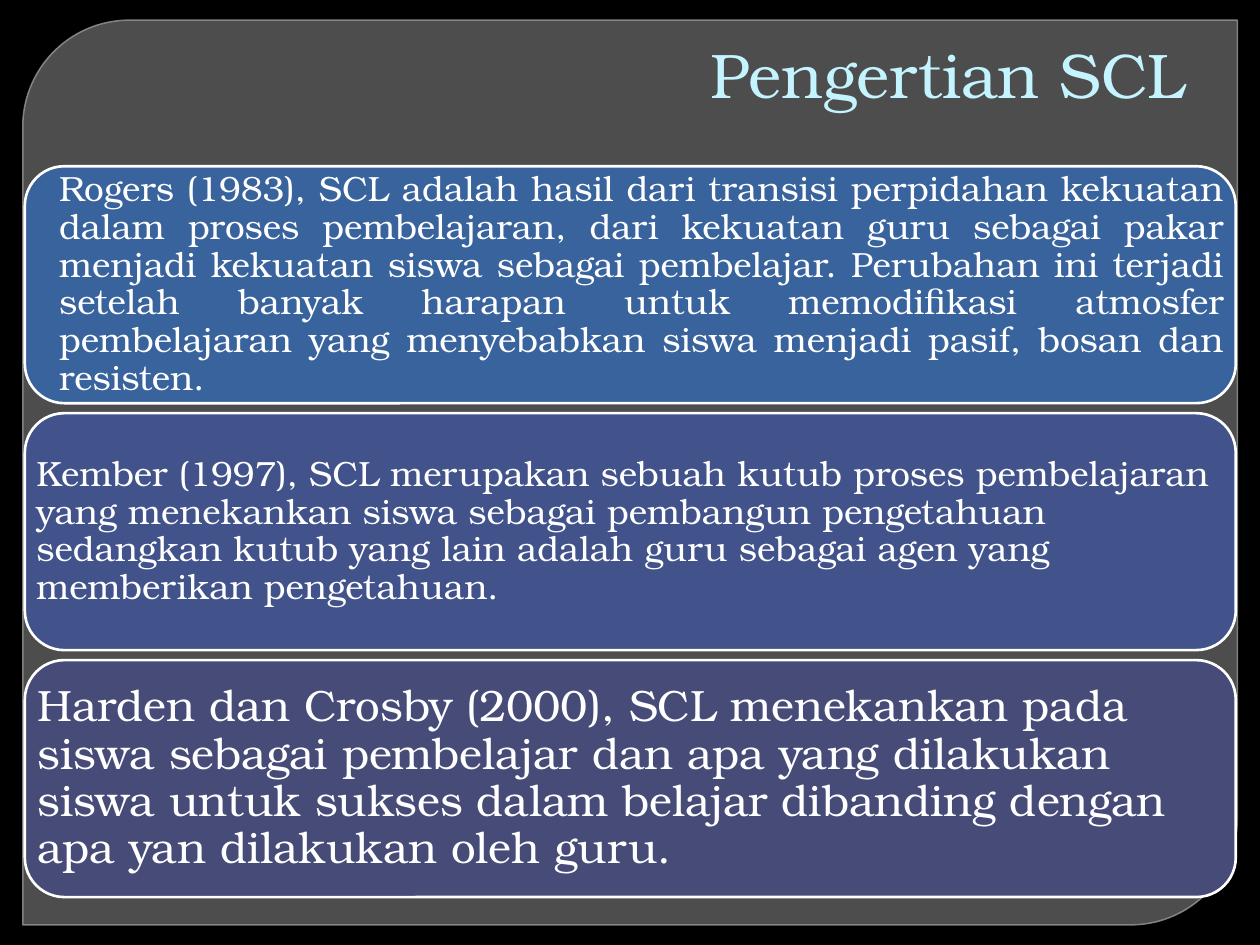
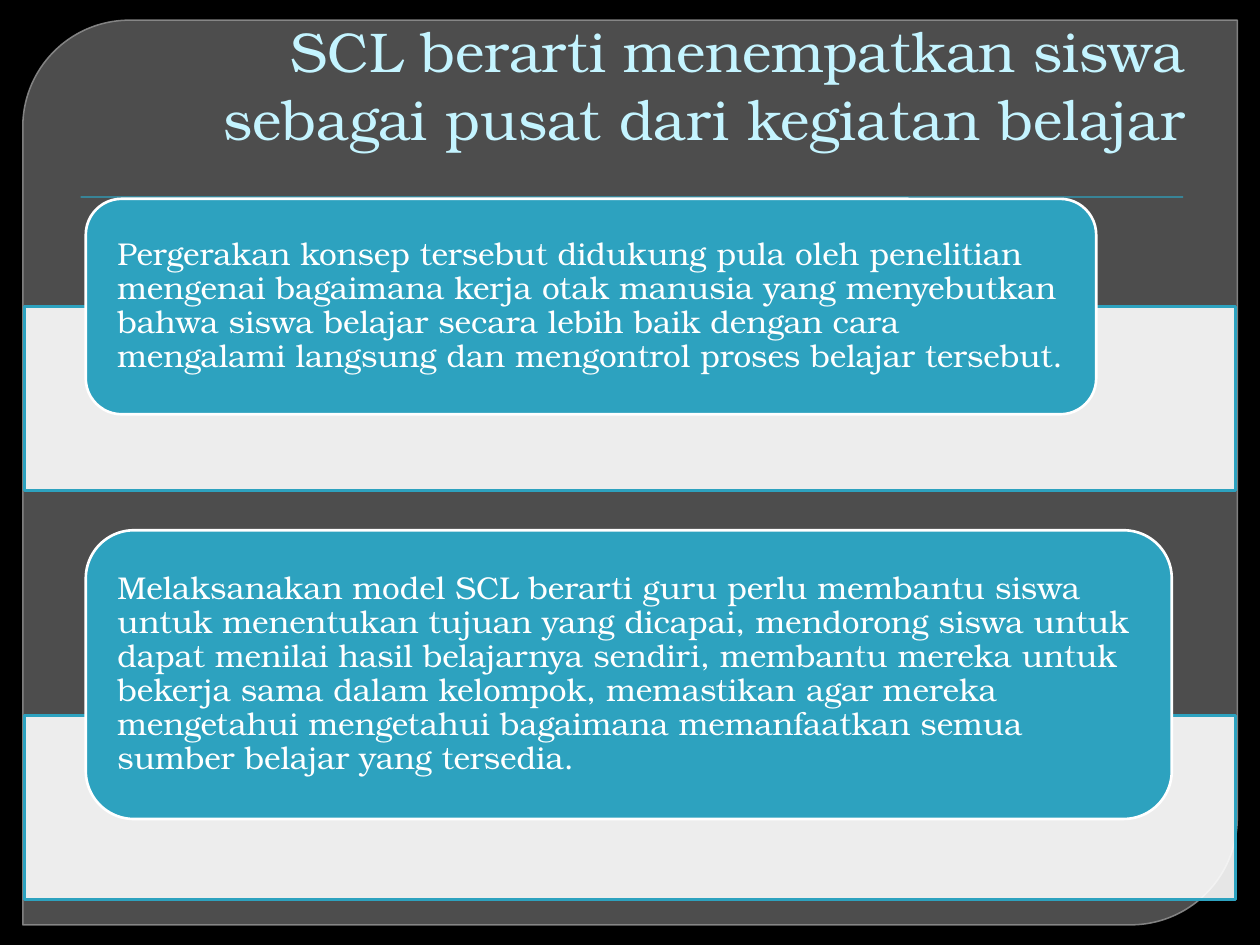
from lxml import etree
from pptx import Presentation
from pptx.dml.color import RGBColor
from pptx.enum.shapes import MSO_SHAPE
from pptx.enum.text import MSO_ANCHOR, PP_ALIGN
from pptx.oxml.ns import qn
from pptx.util import Pt

# Content
DEFINITIONS_TITLE = "Pengertian SCL"
MEANING_TITLE = "SCL berarti menempatkan siswa sebagai pusat dari kegiatan belajar"

BLACK = RGBColor(0x00, 0x00, 0x00)
WHITE = RGBColor(0xFF, 0xFF, 0xFF)
PANEL_GRAY = RGBColor(0x77, 0x77, 0x77)
PANEL_EDGE = RGBColor(0x8E, 0x8E, 0x8E)
TITLE_CYAN = RGBColor(0xC4, 0xF4, 0xFF)
TEAL = RGBColor(0x2D, 0xA2, 0xBF)
BLUE = RGBColor(0x39, 0x63, 0x9D)
INDIGO = RGBColor(0x41, 0x53, 0x8A)
VIOLET = RGBColor(0x47, 0x4B, 0x78)

LEFT = PP_ALIGN.LEFT
JUSTIFY = PP_ALIGN.JUSTIFY
RIGHT = PP_ALIGN.RIGHT
MIDDLE = MSO_ANCHOR.MIDDLE
BOTTOM = MSO_ANCHOR.BOTTOM
RECTANGLE = MSO_SHAPE.RECTANGLE
ROUNDED = MSO_SHAPE.ROUNDED_RECTANGLE
DIAGONAL_ROUND = MSO_SHAPE.ROUND_2_DIAG_RECTANGLE
FONT = "TeX Gyre Bonum"

# (text, fill, font size, text margin, alignment, indent)
DEFINITIONS = [
    ("Rogers (1983), SCL adalah hasil dari transisi perpidahan kekuatan dalam "
     "proses pembelajaran, dari kekuatan guru sebagai pakar menjadi kekuatan "
     "siswa sebagai pembelajar. Perubahan ini terjadi setelah banyak harapan "
     "untuk memodifikasi atmosfer pembelajaran yang menyebabkan siswa menjadi "
     "pasif, bosan dan resisten.", BLUE, 20, 6, JUSTIFY, 13),
    ("Kember (1997), SCL merupakan sebuah kutub proses pembelajaran yang "
     "menekankan siswa sebagai pembangun pengetahuan sedangkan kutub yang lain "
     "adalah guru sebagai agen yang memberikan pengetahuan.",
     INDIGO, 20, 6, LEFT, 0),
    ("Harden dan Crosby (2000), SCL menekankan pada siswa sebagai pembelajar "
     "dan apa yang dilakukan siswa untuk sukses dalam belajar dibanding dengan "
     "apa yan dilakukan oleh guru.", VIOLET, 25, 7.2, LEFT, 0),
]

# (text, card top, card width, card height, strip top)
MEANINGS = [
    ("Pergerakan konsep tersebut didukung pula oleh penelitian mengenai "
     "bagaimana kerja otak manusia yang menyebutkan bahwa siswa belajar secara "
     "lebih baik dengan cara mengalami langsung dan mengontrol proses belajar "
     "tersebut.", 113.6, 577.4, 123.1, 175),
    ("Melaksanakan model SCL berarti guru perlu membantu siswa untuk "
     "menentukan tujuan yang dicapai, mendorong siswa untuk dapat menilai "
     "hasil belajarnya sendiri, membantu mereka untuk bekerja sama dalam "
     "kelompok, memastikan agar mereka mengetahui mengetahui bagaimana "
     "memanfaatkan semua sumber belajar yang tersedia.",
     303, 620.6, 165, 408.8),
]

# Layout, in points
BODY_LEFT, BODY_WIDTH = 14.2, 692
CARD_TOP, CARD_HEIGHT, CARD_GAP = 95, 135.4, 5.7
MEANING_LEFT, MEANING_MARGIN, STRIP_HEIGHT = 49, 18, 105.2
CORNER = 0.1667
CORNER_INSET = 0.29  # share of the corner radius that already insets the text


def set_alpha(fill_parent, percent):
    color = fill_parent.find(qn("a:solidFill"))[0]
    etree.SubElement(color, qn("a:alpha"), val=str(percent * 1000))


def add_box(slide, kind, box, fill, line=None, line_width=1.5, opacity=100):
    shape = slide.shapes.add_shape(kind, *(Pt(value) for value in box))
    shape.shadow.inherit = False
    shape.fill.solid()
    shape.fill.fore_color.rgb = fill
    if opacity < 100:
        set_alpha(shape._element.spPr, opacity)
    if line is None:
        shape.line.fill.background()
    else:
        shape.line.color.rgb = line
        shape.line.width = Pt(line_width)
    return shape


def write(shape, text, size, color, alignment, anchor, margins, indent=0, spacing=1):
    frame = shape.text_frame
    frame.word_wrap = True
    frame.vertical_anchor = anchor
    side, edge = (Pt(value) for value in margins)
    frame.margin_left = frame.margin_right = side
    frame.margin_top = frame.margin_bottom = edge
    paragraph = frame.paragraphs[0]
    paragraph.alignment = alignment
    paragraph.line_spacing = spacing
    if indent:
        paragraph._p.get_or_add_pPr().set("marL", str(Pt(indent)))
    run = paragraph.add_run()
    run.text = text
    run.font.name = FONT
    run.font.size = Pt(size)
    run.font.color.rgb = color


def add_card(slide, box, fill, text, size, margin, alignment=LEFT, indent=0):
    card = add_box(slide, ROUNDED, box, fill, WHITE)
    card.adjustments[0] = CORNER
    side = max(0, margin - CORNER * CORNER_INSET * box[3])
    write(card, text, size, WHITE, alignment, MIDDLE, (side, 0), indent, 0.9)


def add_base_slide(presentation, title, title_size, title_height):
    slide = presentation.slides.add_slide(presentation.slide_layouts[6])
    slide.background.fill.solid()
    slide.background.fill.fore_color.rgb = BLACK
    # Panel with two rounded corners
    panel = add_box(slide, DIAGONAL_ROUND, (13, 11.5, 694, 517),
                    PANEL_GRAY, PANEL_EDGE, 0.87, 65)
    panel.adjustments[0] = 0.118
    panel.adjustments[1] = 0
    set_alpha(panel.line._ln, 88)
    # Title
    title_box = slide.shapes.add_textbox(Pt(36.7), Pt(0), Pt(648), Pt(title_height))
    write(title_box, title, title_size, TITLE_CYAN, RIGHT, BOTTOM, (7.2, 3.6), 4.3)
    return slide


def build_definitions(presentation):
    slide = add_base_slide(presentation, DEFINITIONS_TITLE, 36, 67)
    for index, (text, fill, size, margin, alignment, indent) in enumerate(DEFINITIONS):
        top = CARD_TOP + index * (CARD_HEIGHT + CARD_GAP)
        add_card(slide, (BODY_LEFT, top, BODY_WIDTH, CARD_HEIGHT),
                 fill, text, size, margin, alignment, indent)


def build_meanings(presentation):
    slide = add_base_slide(presentation, MEANING_TITLE, 32, 90)
    # Rule under the title
    add_box(slide, RECTANGLE, (46.1, 112.2, 630, 0.7), TEAL)
    # Pale strips, each with a card over it
    for text, top, width, height, strip_top in MEANINGS:
        add_box(slide, RECTANGLE, (BODY_LEFT, strip_top, BODY_WIDTH, STRIP_HEIGHT),
                WHITE, TEAL, opacity=90)
        add_card(slide, (MEANING_LEFT, top, width, height),
                 TEAL, text, 18, MEANING_MARGIN)


def main():
    presentation = Presentation()
    presentation.slide_width = Pt(720)
    presentation.slide_height = Pt(540)
    build_definitions(presentation)
    build_meanings(presentation)
    presentation.save("out.pptx")


if __name__ == "__main__":
    main()
